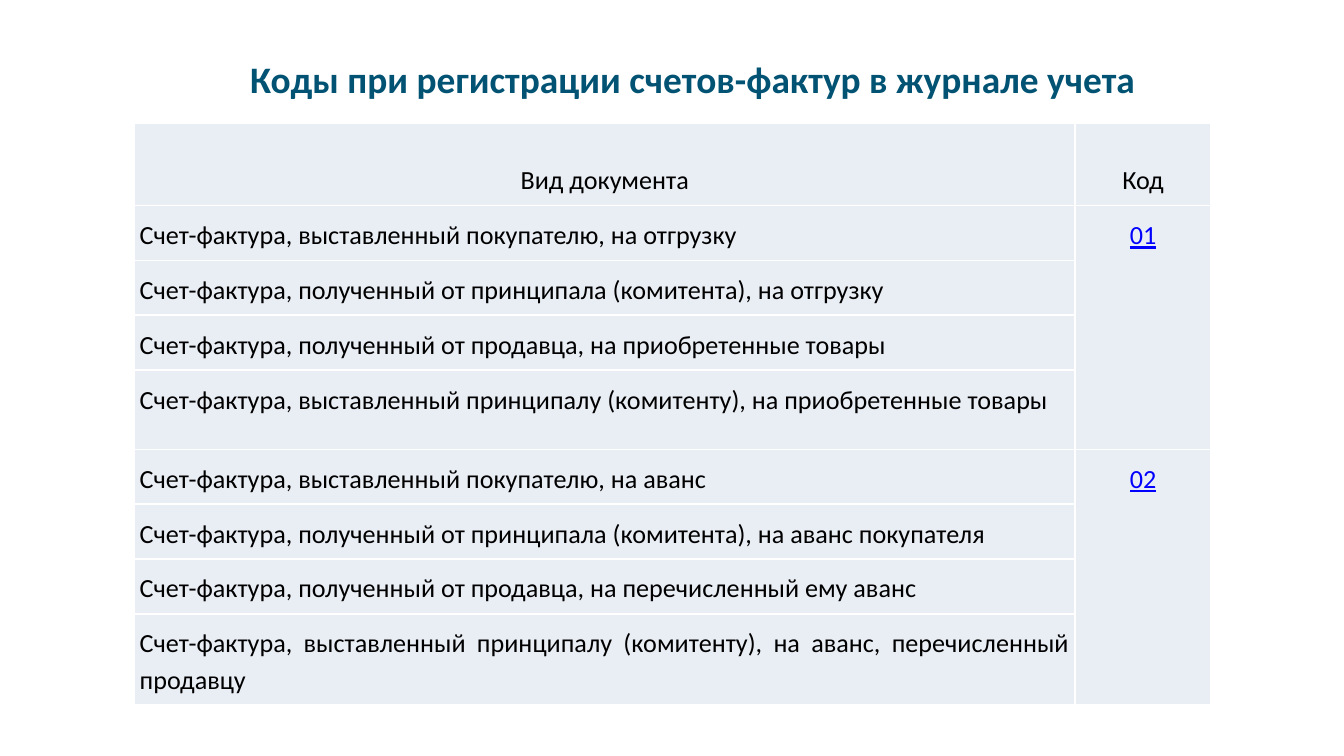
"""Build the slide with a table of invoice register codes."""
from lxml.etree import SubElement
from pptx import Presentation
from pptx.dml.color import RGBColor as Rgb
from pptx.enum.text import MSO_ANCHOR as Anchor, PP_ALIGN as Align
from pptx.oxml.ns import qn
from pptx.util import Inches, Pt

TITLE = "Коды при регистрации счетов-фактур в журнале учета"
HEAD = ("Вид документа", "Код")
GROUPS = [
    ("01", [
        "выставленный покупателю, на отгрузку",
        "полученный от принципала (комитента), на отгрузку",
        "полученный от продавца, на приобретенные товары",
        "выставленный принципалу (комитенту), на приобретенные товары",
    ]),
    ("02", [
        "выставленный покупателю, на аванс",
        "полученный от принципала (комитента), на аванс покупателя",
        "полученный от продавца, на перечисленный ему аванс",
        "выставленный принципалу (комитенту), на аванс, перечисленный продавцу",
    ]),
]
COLS = (7, 1.01)
HEAD_H, ROW_H, LAST_H = 0.61, 0.36, 0.59
COLORS = {"title": "025373", "text": "000000", "code": "0000FF",
          "fill": "E9EDF4", "line": "FFFFFF"}


def style(para, size, color, align):
    para.alignment = align
    font = para.font
    font.name, font.size = "Calibri", Pt(size)
    font.color.rgb = Rgb.from_string(COLORS[color])
    return font


def frame(cell):
    props = cell._tc.get_or_add_tcPr()
    for side in ("lnL", "lnR", "lnT", "lnB"):
        line = SubElement(props, qn(f"a:{side}"), w=str(Pt(1)))
        fill = SubElement(line, qn("a:solidFill"))
        SubElement(fill, qn("a:srgbClr"), val=COLORS["line"])


def dress(cell, text, align, color="text", anchor=Anchor.TOP):
    frame(cell)
    cell.fill.solid()
    cell.fill.fore_color.rgb = Rgb.from_string(COLORS["fill"])
    cell.margin_left = cell.margin_right = Inches(0.04)
    cell.margin_top = cell.margin_bottom = Inches(0.07)
    cell.vertical_anchor = anchor
    para = cell.text_frame.paragraphs[0]
    para.text = text
    para.line_spacing = 1.15
    font = style(para, 14, color, align)
    font.underline = color == "code"


def add_title(slide):
    box = slide.shapes.add_textbox(
        Inches(0.51), Inches(0.37), Inches(9.29), Inches(0.44))
    box.text_frame.word_wrap = True
    para = box.text_frame.paragraphs[0]
    para.text = TITLE
    style(para, 20, "title", Align.CENTER).bold = True


def add_codes(slide):
    rows = [HEAD_H]
    for code, kinds in GROUPS:
        rows += [ROW_H] * (len(kinds) - 1) + [LAST_H]
    table = slide.shapes.add_table(
        len(rows), len(COLS), Inches(1), Inches(0.92),
        Inches(sum(COLS)), Inches(sum(rows))).table
    table.first_row = table.horz_banding = False
    for col, width in zip(table.columns, COLS):
        col.width = Inches(width)
    for row, height in zip(table.rows, rows):
        row.height = Inches(height)
    for col, text in enumerate(HEAD):
        dress(table.cell(0, col), text, Align.CENTER, anchor=Anchor.BOTTOM)
    top = 1
    for code, kinds in GROUPS:
        for step, kind in enumerate(kinds):
            dress(table.cell(top + step, 0), f"Счет-фактура, {kind}", Align.JUSTIFY)
            dress(table.cell(top + step, 1), "" if step else code,
                  Align.CENTER, "code")
        end = top + len(kinds)
        table.cell(top, 1).merge(table.cell(end - 1, 1))
        top = end


def main():
    deck = Presentation()
    deck.slide_width = Inches(10)
    deck.slide_height = deck.slide_width * 9 // 16
    slide = deck.slides.add_slide(deck.slide_layouts[6])
    add_title(slide)
    add_codes(slide)
    deck.save("out.pptx")


if __name__ == "__main__":
    main()
